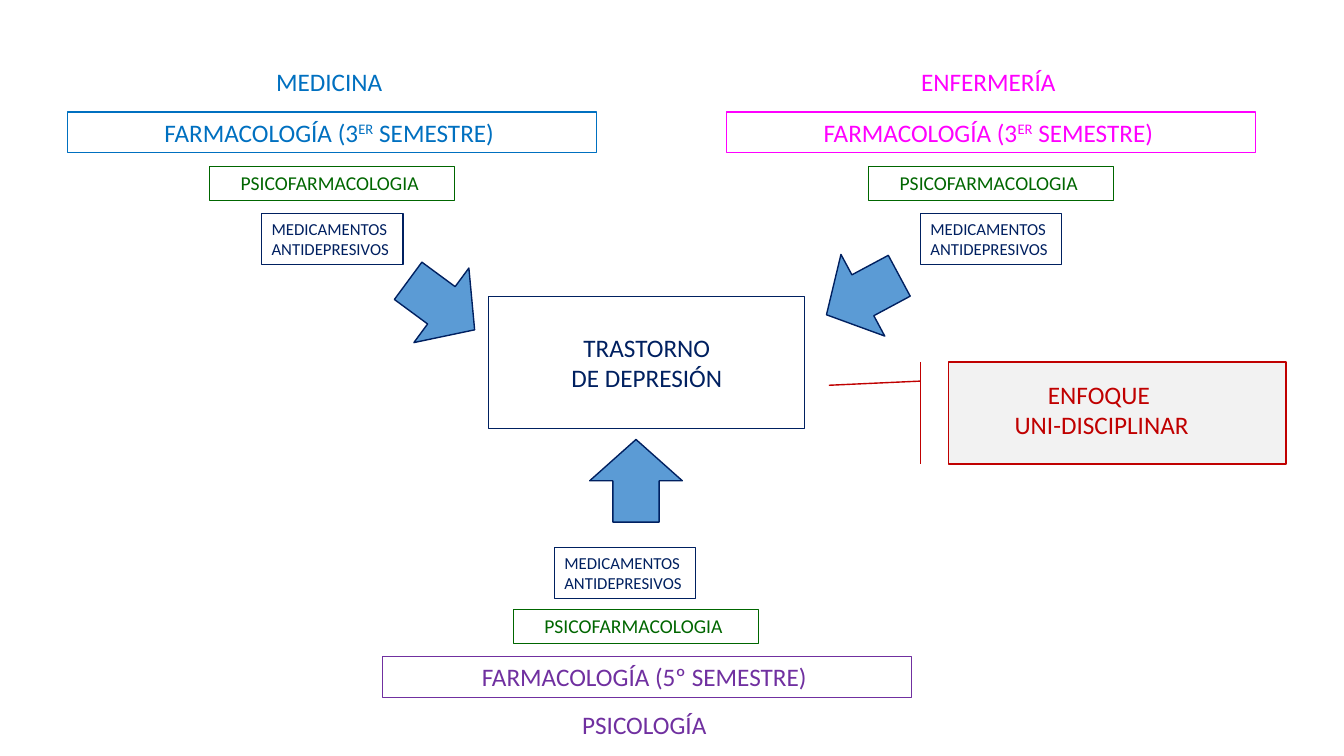
from dataclasses import dataclass

from pptx import Presentation
from pptx.dml.color import RGBColor
from pptx.enum.shapes import MSO_SHAPE as Shape
from pptx.enum.text import MSO_ANCHOR as Anchor, PP_ALIGN as Align
from pptx.util import Pt


@dataclass(frozen=True)
class Theme:
    font: str = "Calibri"
    large: int = 18
    medium: int = 14
    small: int = 12
    medicine: str = "0070C0"
    nursing: str = "FF00FF"
    psychology: str = "7030A0"
    green: str = "006600"
    navy: str = "002060"
    red: str = "C00000"
    arrow: str = "5B9BD5"
    grey: str = "F2F2F2"


THEME = Theme()


def points(*lengths):
    return [Pt(length) for length in lengths]


def set_outline(shape, color, width):
    shape.line.color.rgb = RGBColor.from_string(color)
    shape.line.width = Pt(width)


def add_text(page, place, lines, size, color, outlined=False,
             align=Align.CENTER, anchor=Anchor.TOP):
    """Add a text box; text between ^ marks in a line is superscript."""
    box = page.shapes.add_textbox(*points(*place))
    if outlined:
        set_outline(box, color, 0.75)
    frame = box.text_frame
    for name, value in {"word_wrap": True, "vertical_anchor": anchor}.items():
        setattr(frame, name, value)
    for number, line in enumerate(lines):
        para = frame.add_paragraph() if number else frame.paragraphs[0]
        para.alignment = align
        for index, part in enumerate(line.split("^")):
            run = para.add_run()
            run.text = part
            for name, value in {"name": THEME.font, "size": Pt(size)}.items():
                setattr(run.font, name, value)
            run.font.color.rgb = RGBColor.from_string(color)
            if index % 2:
                run.font._element.set("baseline", "30000")


def add_filled(page, kind, place, fill, outline):
    shape = page.shapes.add_shape(kind, *points(*place))
    shape.shadow.inherit = False
    shape.fill.solid()
    shape.fill.fore_color.rgb = RGBColor.from_string(fill)
    set_outline(shape, outline, 1)
    return shape


def add_arrow(page, left, top, rotation):
    place = (left, top, 59, 66.2)
    arrow = add_filled(page, Shape.RIGHT_ARROW, place, THEME.arrow, THEME.navy)
    arrow.rotation = rotation


def add_branch(page, degree, course, color, lefts, tops):
    """Add a degree's heading, course, topic and drug boxes."""
    course_left, topic_left, drug_left = lefts
    heading_top, course_top, topic_top, drug_top = tops
    course_width, heading_width = 378, 140
    heading_left = course_left + (course_width - heading_width) / 2
    add_text(page, (heading_left, heading_top, heading_width, 29), [degree],
             THEME.large, color)
    add_text(page, (course_left, course_top, course_width, 29), [course],
             THEME.large, color, outlined=True)
    add_text(page, (topic_left, topic_top, 175, 24.3), ["PSICOFARMACOLOGIA "],
             THEME.medium, THEME.green, outlined=True)
    add_text(page, (drug_left, drug_top, 101, 36.3),
             ["MEDICAMENTOS ANTIDEPRESIVOS"],
             THEME.small, THEME.navy, outlined=True, align=Align.LEFT)


def add_approach(page):
    callout = add_filled(page, Shape.LINE_CALLOUT_1_BORDER_AND_ACCENT_BAR,
                         (677.5, 258.5, 241.2, 73), THEME.grey, THEME.red)
    for index, value in enumerate((0.188, -0.083, 0.229, -0.354)):
        callout.adjustments[index] = value
    add_text(page, (673.2, 267.1, 227.5, 51), ["ENFOQUE ", "UNI-DISCIPLINAR"],
             THEME.large, THEME.red)


def main():
    deck = Presentation()
    deck.slide_width, deck.slide_height = points(960, 540)
    page = deck.slides.add_slide(deck.slide_layouts[6])

    upper_tops = (44, 80, 118.8, 152.4)
    third_term = "FARMACOLOGÍA (3^ER^ SEMESTRE) "
    add_branch(page, "MEDICINA ", third_term, THEME.medicine,
               (48.2, 149.6, 186.9), upper_tops)
    add_branch(page, "ENFERMERÍA ", third_term, THEME.nursing,
               (519, 620.4, 657.5), upper_tops)
    add_branch(page, "PSICOLOGÍA ", "FARMACOLOGÍA (5º SEMESTRE) ",
               THEME.psychology, (273.3, 366.6, 396),
               (503.3, 468.9, 435.2, 391))

    add_text(page, (349, 211.7, 226, 94.3), ["TRASTORNO", "DE DEPRESIÓN"],
             THEME.large, THEME.navy, outlined=True, anchor=Anchor.MIDDLE)
    for left, top, rotation in ((285.8, 185, 36.4), (586.8, 177.8, 151.8),
                                (424.8, 310.3, 270)):
        add_arrow(page, left, top, rotation)
    add_approach(page)
    deck.save("out.pptx")


if __name__ == "__main__":
    main()
